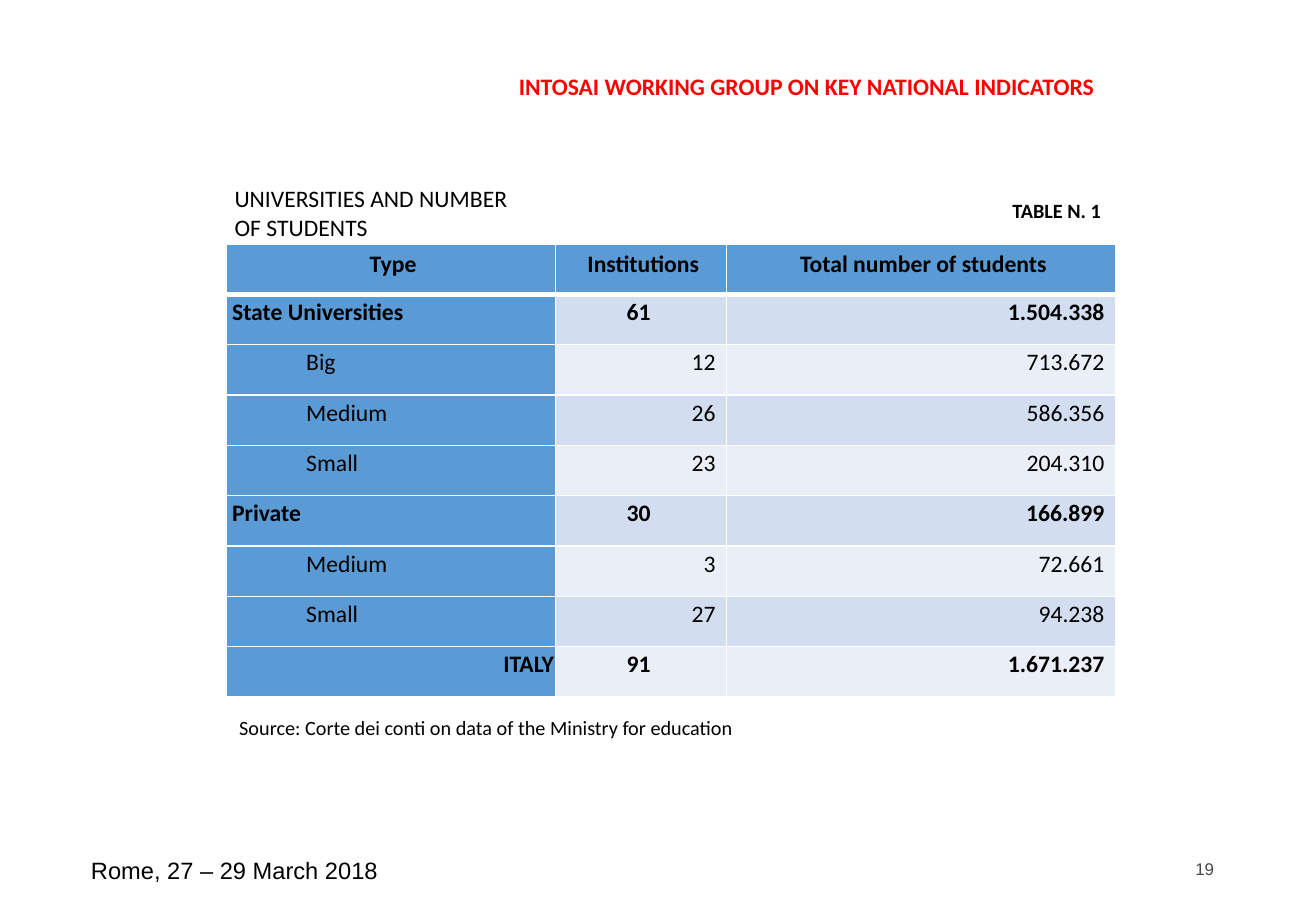
from lxml.etree import SubElement as Sub
from pptx import Presentation
from pptx.dml.color import RGBColor as RGB
from pptx.enum.shapes import MSO_SHAPE as Shape
from pptx.enum.text import MSO_ANCHOR as Anchor, MSO_AUTO_SIZE as Fit, PP_ALIGN as Align
from pptx.oxml.ns import qn
from pptx.util import Inches, Pt

WHITE = RGB(0xFF, 0xFF, 0xFF)
BLACK = RGB(0, 0, 0)
RED = RGB(0xFF, 0, 0)
GREY = RGB(0x48, 0x48, 0x4A)
BLUE = RGB(0x5B, 0x9B, 0xD5)
BANDS = RGB(0xD2, 0xDE, 0xEF), RGB(0xEA, 0xEF, 0xF7)

UNIT = 0.1  # grid step in inches
COLS, ROWS = 108.3, 75
WIDTHS = 27.1, 14.1, 32
HEADS = "Type", "Institutions", "Total number of students"
DATA = [
    ("State Universities", "61", "1.504.338"),
    ("Big", "12", "713.672"),
    ("Medium", "26", "586.356"),
    ("Small", "23", "204.310"),
    ("Private", "30", "166.899"),
    ("Medium", "3", "72.661"),
    ("Small", "27", "94.238"),
    ("ITALY", "91", "1.671.237"),
]
GROUPS = "State Universities", "Private", "ITALY"


def grid(n):
    return Inches(n * UNIT)


def write(frame, text, size=14, bold=False, color=BLACK, font="Calibri",
          align=Align.LEFT, space=None):
    par = frame.paragraphs[0]
    par.text = text
    par.alignment = align
    par.line_spacing = space
    face = par.font
    face.name, face.size, face.bold = font, Pt(size), bold
    face.color.rgb = color


def label(shape, box, text, pads=(1, 0.5, 1, 0.5), wrap=True, **form):
    """Move a shape to the box and give it one line of text."""
    shape.left, shape.top, shape.width, shape.height = map(grid, box)
    frame = shape.text_frame
    frame.auto_size = Fit.NONE
    frame.word_wrap = wrap
    frame.vertical_anchor = Anchor.MIDDLE
    (frame.margin_left, frame.margin_top,
     frame.margin_right, frame.margin_bottom) = map(grid, pads)
    write(frame, text, **form)


def note(slide, box, text, **form):
    label(slide.shapes.add_textbox(0, 0, 0, 0), box, text, **form)


def panel(slide, box, text, shape=None, **form):
    """Set a line on a white rectangle, or on the given placeholder."""
    if shape is None:
        shape = slide.shapes.add_shape(Shape.RECTANGLE, 0, 0, 0, 0)
        shape.shadow.inherit = False
    shape.fill.solid()
    shape.fill.fore_color.rgb = WHITE
    shape.line.fill.background()
    label(shape, box, text, wrap=False, **form)


def edge(cell, low=1):
    """Draw white borders, the lower one with its own width."""
    props = cell._tc.get_or_add_tcPr()
    for i, (tag, width) in enumerate(
            (("a:lnL", 1), ("a:lnR", 1), ("a:lnT", 1), ("a:lnB", low))):
        line = props.makeelement(qn(tag), {"w": str(Pt(width))})
        fill = Sub(line, qn("a:solidFill"))
        Sub(fill, qn("a:srgbClr"), val=str(WHITE))
        props.insert(i, line)


def style(cell, text, fill, left=0.5, right=0.1, low=1, **form):
    cell.fill.solid()
    cell.fill.fore_color.rgb = fill
    cell.margin_left, cell.margin_right = grid(left), grid(right)
    cell.margin_top, cell.margin_bottom = grid(0.3), 0
    write(cell.text_frame, text, **form)
    edge(cell, low)


def census(slide, box):
    count = len(DATA) + 1
    table = slide.shapes.add_table(count, len(HEADS), *map(grid, box)).table
    for col, width in zip(table.columns, WIDTHS):
        col.width = grid(width)
    for row in table.rows:
        row.height = grid(box[3] / count)
    for c, head in enumerate(HEADS):
        style(table.cell(0, c), head, BLUE, low=3, bold=True,
              align=Align.CENTER, space=1.07)
    for r, (kind, places, total) in enumerate(DATA, 1):
        bold = kind in GROUPS
        band = BANDS[(r - 1) % 2]
        style(table.cell(r, 0), kind, BLUE, left=0.5 if bold else 6.6, bold=bold,
              align=Align.RIGHT if kind == "ITALY" else Align.LEFT)
        style(table.cell(r, 1), places, band, right=0.9, bold=bold,
              align=Align.CENTER if bold else Align.RIGHT)
        style(table.cell(r, 2), total, band, right=0.9, bold=bold, align=Align.RIGHT)


def body(slide, box):
    """Place the table with its title, number and source around it."""
    x, y, w, h = box
    census(slide, box)
    panel(slide, (x - 0.3, y - 4.7, 26.3, 4.2), "UNIVERSITIES AND NUMBER OF STUDENTS",
          shape=slide.shapes.title)
    panel(slide, (x + 0.1, y + h + 0.4, 42.9, 4.2),
          "Source: Corte dei conti on data of the Ministry for education", size=12)
    panel(slide, (x + w - 10.2, y - 3.8, 10, 2.1), "TABLE N. 1", size=12,
          bold=True, align=Align.RIGHT)


def footer(slide, box):
    x, y, w, h = box
    note(slide, (x + w - 24.4, y, 24.4, h), "19", size=10, font="Arial",
         color=GREY, align=Align.RIGHT)
    note(slide, (x, y + 0.4, 26.9, 3.4), "Rome, 27 – 29 March 2018", font="Arial")


def main():
    deck = Presentation()
    deck.slide_width, deck.slide_height = grid(COLS), grid(ROWS)
    slide = deck.slides.add_slide(deck.slide_layouts[5])
    panel(slide, (42.1, 5.6, 49, 3), "INTOSAI WORKING GROUP ON KEY NATIONAL INDICATORS",
          pads=(0.6, 0.3, 0.6, 0.3), bold=True, color=RED)
    body(slide, (18.6, 20.1, 73.2, 37.3))
    footer(slide, (6.5, 69.5, 94.4, 4))
    deck.save("out.pptx")


if __name__ == "__main__":
    main()
